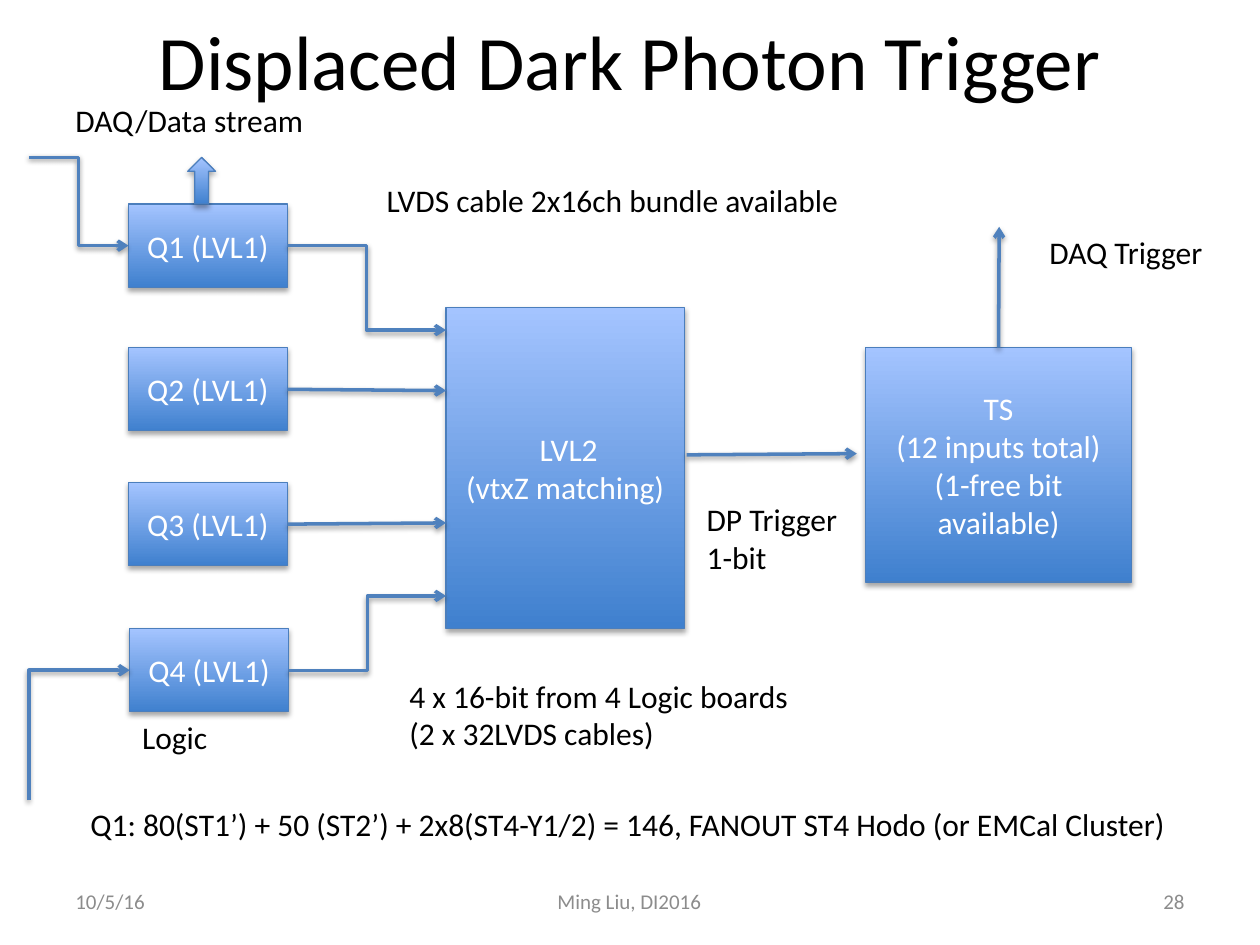
from dataclasses import dataclass

from pptx import Presentation
from pptx.dml.color import RGBColor
from pptx.enum.shapes import MSO_CONNECTOR, MSO_SHAPE
from pptx.enum.text import MSO_ANCHOR, PP_ALIGN
from pptx.oxml import parse_xml
from pptx.oxml.ns import nsdecls
from pptx.util import Inches, Pt


@dataclass(frozen=True)
class Theme:
    font: str = "Calibri"
    title_size: int = 44
    body_size: int = 18
    footer_size: int = 12
    ink: str = "000000"
    light: str = "FFFFFF"
    muted: str = "8C8C8C"
    gradient: tuple = ("3F80CE", "A4C4FF")
    outline: str = "4B7EBC"
    wire: str = "4F81BD"


THEME = Theme()


def color(value):
    return RGBColor.from_string(value)


def write(frame, text, size, ink, align):
    frame.text = text
    for para in frame.paragraphs:
        para.alignment = align
        for span in para.runs:
            span.font.name = THEME.font
            span.font.size = Pt(size)
            span.font.color.rgb = color(ink)


def add_shadow(shape, opacity, distance):
    shape._element.spPr.append(parse_xml(
        f'<a:effectLst {nsdecls("a")}>'
        f'<a:outerShdw blurRad="{Pt(3.1)}" dist="{Pt(distance)}" dir="5400000" rotWithShape="0">'
        f'<a:srgbClr val="000000"><a:alpha val="{opacity * 1000}"/></a:srgbClr>'
        '</a:outerShdw></a:effectLst>'))


def set_title(page, text):
    title = page.shapes.title
    title.left, title.top = Inches(0.5), Inches(0)
    title.width, title.height = Inches(9), Inches(0.94)
    title.text_frame.vertical_anchor = MSO_ANCHOR.MIDDLE
    write(title.text_frame, text, THEME.title_size, THEME.ink, PP_ALIGN.CENTER)


def add_block(page, left, top, width, height, text="", kind=MSO_SHAPE.RECTANGLE):
    block = page.shapes.add_shape(kind, Inches(left), Inches(top), Inches(width), Inches(height))
    block.fill.gradient()
    block.fill.gradient_angle = 90
    for stop, value, position in zip(block.fill.gradient_stops, THEME.gradient, (0, 1)):
        stop.color.rgb = color(value)
        stop.position = position
    block.line.color.rgb = color(THEME.outline)
    block.line.width = Pt(0.75)
    add_shadow(block, 35, 1.8)
    if text:
        block.text_frame.vertical_anchor = MSO_ANCHOR.MIDDLE
        write(block.text_frame, text, THEME.body_size, THEME.light, PP_ALIGN.CENTER)
    return block


def add_arrow(page, start, end, kind=MSO_CONNECTOR.STRAIGHT):
    arrow = page.shapes.add_connector(kind, *map(Inches, start + end))
    arrow.line.color.rgb = color(THEME.wire)
    arrow.line.width = Pt(2)
    arrow.line._get_or_add_ln().append(parse_xml(f'<a:tailEnd {nsdecls("a")} type="arrow"/>'))
    add_shadow(arrow, 38, 1.6)
    return arrow


def add_corner_arrow(page, start, end):
    center_x, center_y = (start[0] + end[0]) / 2, (start[1] + end[1]) / 2
    half_run, half_rise = (end[0] - start[0]) / 2, (start[1] - end[1]) / 2
    arrow = add_arrow(page, (center_x + half_rise, center_y + half_run),
                      (center_x - half_rise, center_y - half_run), MSO_CONNECTOR.ELBOW)
    properties = arrow._element.spPr
    properties.xfrm.set("rot", "5400000")
    properties.prstGeom.set("prst", "bentConnector2")


def add_label(page, left, top, width, height, text, wrap=False):
    box = page.shapes.add_textbox(Inches(left), Inches(top), Inches(width), Inches(height))
    box.text_frame.word_wrap = wrap
    write(box.text_frame, text, THEME.body_size, THEME.ink, PP_ALIGN.LEFT)


def add_footer(page, left, width, text, align):
    box = page.shapes.add_textbox(Inches(left), Inches(6.95), Inches(width), Inches(0.4))
    box.text_frame.word_wrap = True
    box.text_frame.vertical_anchor = MSO_ANCHOR.MIDDLE
    write(box.text_frame, text, THEME.footer_size, THEME.muted, align)


def main():
    deck = Presentation()
    deck.slide_width, deck.slide_height = Inches(10), Inches(7.5)
    page = deck.slides.add_slide(deck.slide_layouts[5])
    set_title(page, "Displaced Dark Photon Trigger")

    add_footer(page, 0.5, 2.33, "10/5/16", PP_ALIGN.LEFT)
    add_footer(page, 2.83, 4.33, "Ming Liu, DI2016", PP_ALIGN.CENTER)
    add_footer(page, 7.17, 2.33, "28", PP_ALIGN.RIGHT)

    quadrants = [
        add_block(page, left, top, 1.26, 0.66, f"Q{number} (LVL1)")
        for number, (left, top) in enumerate(
            [(1.02, 1.62), (1.02, 2.76), (1.02, 3.83), (1.03, 4.99)], start=1)
    ]
    add_block(page, 3.54, 2.44, 1.89, 2.55, " LVL2\n(vtxZ matching)")
    trigger = add_block(page, 6.87, 2.76, 2.11, 1.86,
                        "TS\n(12 inputs total)\n(1-free bit available)")
    add_block(page, 1.49, 1.25, 0.22, 0.37, kind=MSO_SHAPE.UP_ARROW)

    for start, end in [
        ((2.28, 1.95), (3.54, 2.62)),
        ((2.29, 5.32), (3.54, 4.73)),
        ((0.23, 1.25), (1.02, 1.95)),
    ]:
        add_arrow(page, start, end, MSO_CONNECTOR.ELBOW)
    add_corner_arrow(page, (0.23, 6.35), (1.03, 5.32))

    for source, side, start, end in [
        (quadrants[1], 3, (2.28, 3.09), (3.54, 3.1)),
        (quadrants[2], 3, (2.28, 4.16), (3.54, 4.15)),
        (trigger, 0, (7.92, 2.76), (7.93, 1.8)),
    ]:
        add_arrow(page, start, end).begin_connect(source, side)
    add_arrow(page, (5.45, 3.61), (6.8, 3.6))

    add_label(page, 0.5, 0.75, 2.03, 0.4, "DAQ/Data stream")
    add_label(page, 2.97, 1.39, 3.85, 0.4, "LVDS cable 2x16ch bundle available")
    add_label(page, 8.23, 1.8, 1.45, 0.4, "DAQ Trigger")
    add_label(page, 5.51, 3.92, 1.27, 0.71, "DP Trigger\n1-bit")
    add_label(page, 3.15, 5.32, 3.38, 0.71,
              "4 x 16-bit from 4 Logic boards\n(2 x 32LVDS cables)")
    add_label(page, 1.03, 5.65, 0.86, 0.4, "Logic")
    add_label(page, 0.62, 6.34, 9.07, 0.71,
              "Q1: 80(ST1’) + 50 (ST2’) + 2x8(ST4-Y1/2) = 146, "
              "FANOUT ST4 Hodo (or EMCal Cluster)", wrap=True)

    deck.save("out.pptx")


if __name__ == "__main__":
    main()
